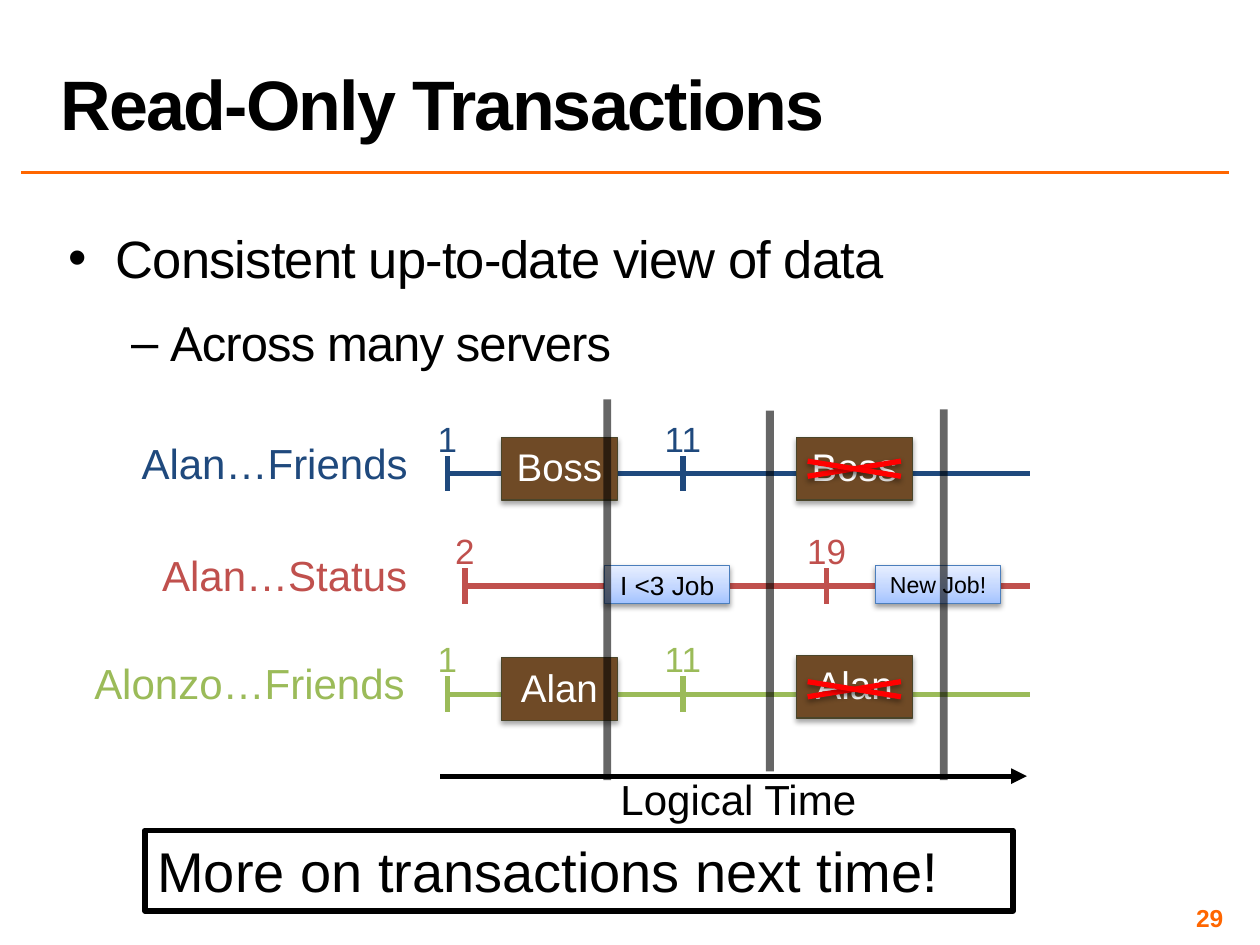
from copy import deepcopy

from lxml.etree import SubElement
from pptx import Presentation
from pptx.dml.color import RGBColor
from pptx.enum.shapes import MSO_CONNECTOR as Connector, MSO_SHAPE as Shape
from pptx.enum.text import MSO_ANCHOR as Anchor, MSO_AUTO_SIZE as AutoSize, PP_ALIGN as Align
from pptx.oxml.ns import qn
from pptx.util import Inches, Pt

BLACK = RGBColor(0x00, 0x00, 0x00)
WHITE = RGBColor(0xFF, 0xFF, 0xFF)
ORANGE = RGBColor(0xFF, 0x66, 0x00)
RED = RGBColor(0xFF, 0x00, 0x00)
BLUE = RGBColor(0x1F, 0x49, 0x7D)
BRICK = RGBColor(0xC0, 0x50, 0x4D)
GREEN = RGBColor(0x9B, 0xBB, 0x59)
BROWN = RGBColor(0x6F, 0x4A, 0x26)
BROWN_EDGE = RGBColor(0x4A, 0x45, 0x2A)
STATUS_EDGE = RGBColor(0x4B, 0x7E, 0xBC)
STATUS_STOPS = [
    (0, RGBColor(0xA4, 0xC4, 0xFF)),
    (0.35, RGBColor(0xBF, 0xD4, 0xFF)),
    (1, RGBColor(0xE6, 0xEE, 0xFF)),
]

TIMELINE_END = 8.15
TIMELINES = [
    (BLUE, 3.76, "Alan…Friends", 2.18, 2.34, [(3.55, "1", 0.36), (5.42, "11", 0.51)]),
    (BRICK, 4.65, "Alan…Status", 2.26, 2.17, [(3.69, "2", 0.36), (6.56, "19", 0.51)]),
    (GREEN, 5.51, "Alonzo…Friends", 1.98, 2.69, [(3.55, "1", 0.36), (5.42, "11", 0.51)]),
]
FRIENDS = [("Boss", 3.47, 3.47, 3.72), ("Alan", 5.22, 5.2, 5.47)]
STATUSES = [("New Job!", 6.95, 13.2), ("I <3 Job", 4.8, 15)]
SNAPSHOTS = [(4.82, 3.2, 6.16), (6.11, 3.29, 6.09), (7.49, 3.28, 6.16)]


def apply(target, values):
    for name, value in values.items():
        setattr(target, name, value)


def place(shape, left, top, width, height):
    apply(shape, {"left": Inches(left), "top": Inches(top),
                  "width": Inches(width), "height": Inches(height)})


def add_span(para, text, size, color, bold=False, spacing=0):
    span = para.add_run()
    span.text = text
    apply(span.font, {"name": "Arial", "size": Pt(size), "bold": bold})
    span.font.color.rgb = color
    if spacing:
        span.font._element.set("spc", str(int(spacing * 100)))


def add_shadow(effects, alpha, distance):
    shadow = SubElement(effects, qn("a:outerShdw"), blurRad=str(Pt(3.1)),
                        dist=str(Pt(distance)), dir="5400000", rotWithShape="0")
    color = SubElement(shadow, qn("a:srgbClr"), val="000000")
    SubElement(color, qn("a:alpha"), val=str(alpha * 1000))


def add_line(page, start, end, color, width=3, cap="sq", alpha=None, arrow=False, shadow=False):
    line = page.shapes.add_connector(Connector.STRAIGHT, *map(Inches, start + end))
    line.line.width = Pt(width)
    line.line.color.rgb = color
    properties = line._element.spPr
    outline = properties.find(qn("a:ln"))
    outline.set("cap", cap)
    if alpha:
        SubElement(outline.find(".//" + qn("a:srgbClr")), qn("a:alpha"), val=str(alpha * 1000))
    if arrow:
        SubElement(outline, qn("a:tailEnd"), type="triangle")
    effects = SubElement(properties, qn("a:effectLst"))
    if shadow:
        add_shadow(effects, 38, 1.6)


def add_label(page, text, center, top, width, height, size, color):
    box = page.shapes.add_textbox(*map(Inches, (center - width / 2, top, width, height)))
    apply(box.text_frame, {"word_wrap": False, "vertical_anchor": Anchor.MIDDLE,
                           "auto_size": AutoSize.SHAPE_TO_FIT_TEXT})
    para = box.text_frame.paragraphs[0]
    para.alignment = Align.CENTER
    add_span(para, text, size, color)


def add_box(page, text, at, size, color, edge, edge_width, align, anchor):
    box = page.shapes.add_shape(Shape.RECTANGLE, *map(Inches, at))
    box.shadow.inherit = False
    box.line.color.rgb = edge
    box.line.width = Pt(edge_width)
    apply(box.text_frame, {"word_wrap": True, "vertical_anchor": anchor})
    para = box.text_frame.paragraphs[0]
    para.alignment = align
    add_span(para, text, size, color)
    return box


def add_friend(page, text, left, top):
    box = add_box(page, text, (left, top, 0.92, 0.5), 22, WHITE,
                  BROWN_EDGE, 0.75, Align.CENTER, Anchor.TOP)
    box.fill.solid()
    box.fill.fore_color.rgb = BROWN
    add_shadow(box._element.spPr.find(qn("a:effectLst")), 35, 1.8)


def add_cross(page, middle):
    for rise in (0.06, -0.06):
        add_line(page, (6.41, middle + rise), (7.15, middle - rise), RED,
                 cap="flat", shadow=True)


def add_status(page, text, left, size):
    box = add_box(page, text, (left, 4.49, 0.99, 0.3), size, BLACK,
                  STATUS_EDGE, 0.75, Align.CENTER, Anchor.MIDDLE)
    box.fill.gradient()
    box.fill.gradient_angle = 90
    stop_list = box._element.spPr.find(".//" + qn("a:gsLst"))
    stop_list.append(deepcopy(stop_list[0]))
    for stop, (position, color) in zip(box.fill.gradient_stops, STATUS_STOPS):
        stop.position = position
        stop.color.rgb = color
    add_shadow(box._element.spPr.find(qn("a:effectLst")), 38, 1.6)


def add_timeline(page, color, middle, name, center, width, ticks):
    add_line(page, (ticks[0][0] + 0.01, middle), (TIMELINE_END, middle), color)
    add_label(page, name, center, middle - 0.34, width, 0.5, 24, color)
    for x, number, number_width in ticks:
        add_line(page, (x, middle - 0.12), (x, middle + 0.12), color)
        add_label(page, number, x, middle - 0.5, number_width, 0.44, 20, color)


def fill_title(page):
    title = page.shapes.title
    place(title, 0.38, 0.02, 9.37, 1.17)
    apply(title.text_frame, {"vertical_anchor": Anchor.BOTTOM, "auto_size": AutoSize.NONE})
    para = title.text_frame.paragraphs[0]
    apply(para, {"alignment": Align.LEFT, "line_spacing": 0.8})
    add_span(para, "Read-Only Transactions", 40, BLACK, True, -1)


def fill_body(page):
    body = page.placeholders[1]
    place(body, 0.5, 1.75, 9, 1.97)
    frame = body.text_frame
    margins = dict.fromkeys(("margin_left", "margin_top", "margin_right", "margin_bottom"),
                            Inches(0.04))
    apply(frame, {"auto_size": AutoSize.NONE, **margins})
    bullets = [
        ("Consistent up-to-date view of data", 30, 0.38, -0.38, 30, 1.0),
        ("Across many servers", 28, 0.81, -0.31, 8, 0.95),
    ]
    for level, (text, size, margin, indent, before, spacing) in enumerate(bullets):
        para = frame.add_paragraph() if level else frame.paragraphs[0]
        apply(para, {"level": level, "space_before": Pt(before),
                     "space_after": Pt(8), "line_spacing": spacing})
        properties = para._p.get_or_add_pPr()
        properties.set("marL", str(Inches(margin)))
        properties.set("indent", str(Inches(indent)))
        add_span(para, text, size, BLACK, spacing=-0.5)


def add_page_number(page):
    box = page.shapes.add_textbox(*map(Inches, (7.42, 7.17, 2.33, 0.23)))
    apply(box.text_frame, {"word_wrap": True, "vertical_anchor": Anchor.MIDDLE,
                           "margin_right": Inches(0.04), "margin_top": Inches(0.04),
                           "margin_left": Inches(0.04), "margin_bottom": Inches(0.04)})
    para = box.text_frame.paragraphs[0]
    para.alignment = Align.RIGHT
    add_span(para, "29", 14, ORANGE, True)


def main():
    deck = Presentation()
    apply(deck, {"slide_width": Inches(10), "slide_height": Inches(7.5)})
    page = deck.slides.add_slide(deck.slide_layouts[1])
    fill_title(page)
    fill_body(page)
    add_line(page, (0.17, 1.37), (9.75, 1.37), ORANGE, 2, cap="flat")
    add_line(page, (3.51, 6.16), (TIMELINE_END, 6.16), BLACK, arrow=True)
    add_label(page, "Logical Time", 5.86, 6.09, 2.09, 0.5, 24, BLACK)
    for timeline in TIMELINES:
        add_timeline(page, *timeline)
    for name, added_top, removed_top, cross_middle in FRIENDS:
        add_friend(page, name, 3.98, added_top)
        add_friend(page, name, 6.32, removed_top)
        add_cross(page, cross_middle)
    for status in STATUSES:
        add_status(page, *status)
    for x, top, bottom in SNAPSHOTS:
        add_line(page, (x, top), (x, bottom), BLACK, 4.5, alpha=60)
    callout = add_box(page, "More on transactions next time!", (1.15, 6.59, 6.89, 0.64),
                      32, BLACK, BLACK, 3, Align.LEFT, Anchor.TOP)
    callout.fill.background()
    add_page_number(page)
    deck.save("out.pptx")


if __name__ == "__main__":
    main()
